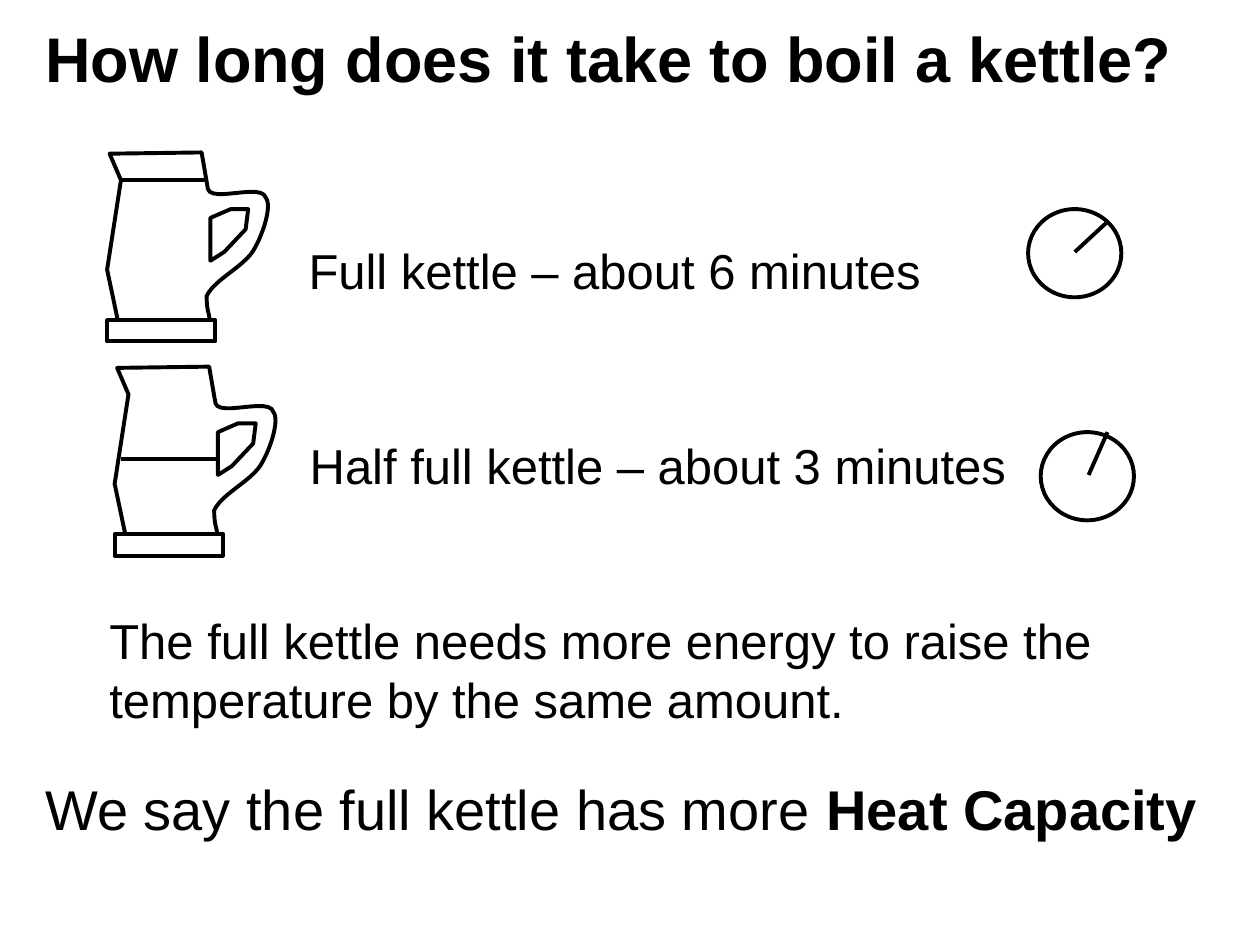
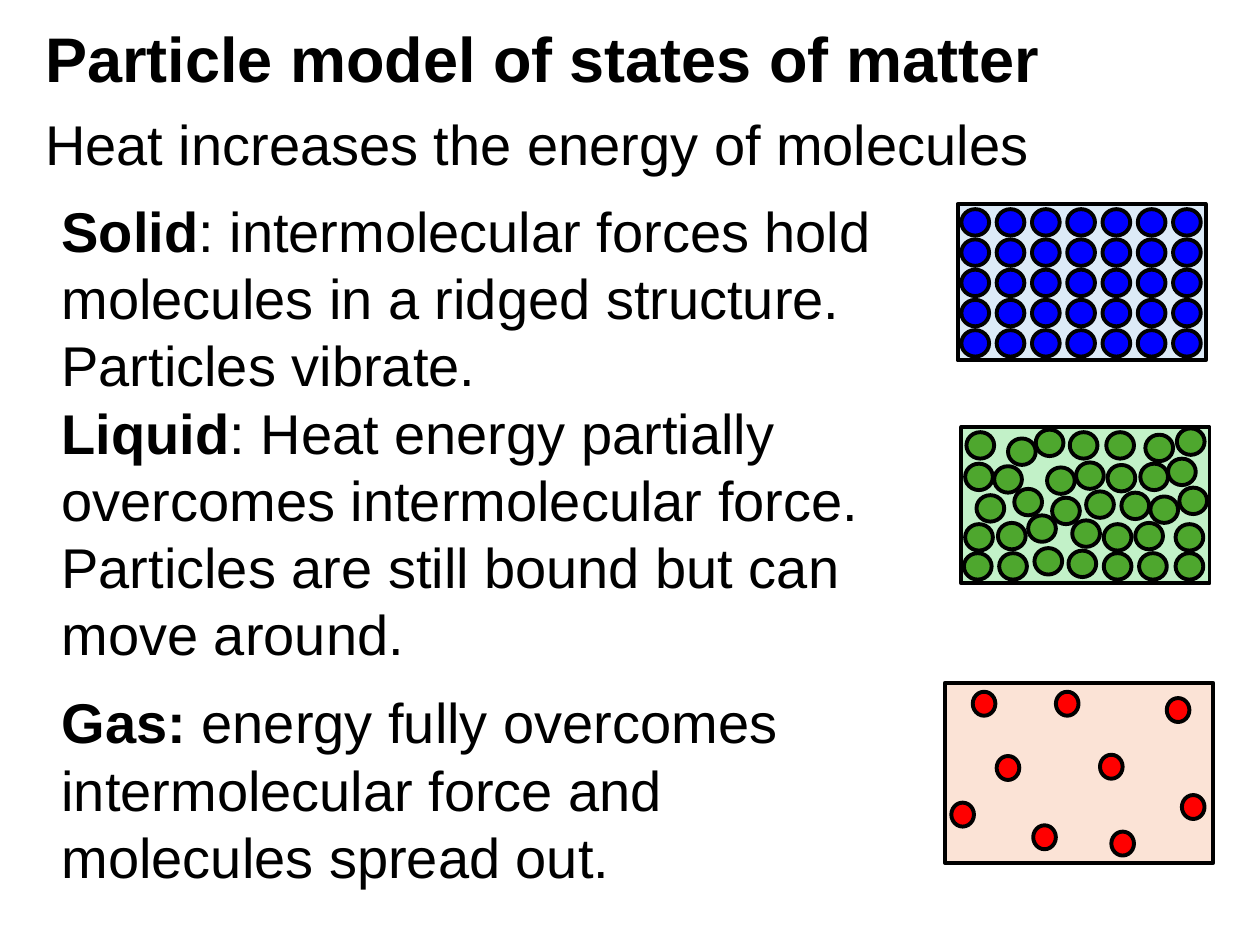
from dataclasses import dataclass
from itertools import product

from lxml.etree import SubElement
from pptx import Presentation
from pptx.dml.color import RGBColor
from pptx.enum.shapes import MSO_CONNECTOR, MSO_SHAPE
from pptx.enum.text import MSO_ANCHOR, MSO_AUTO_SIZE, PP_ALIGN
from pptx.oxml.ns import qn
from pptx.util import Inches, Pt


@dataclass(frozen=True)
class Theme:
    font: str = "Arial"
    ink: str = "000000"
    paper: str = "FFFFFF"
    solid_fill: str = "DCEAF7"
    solid_particle: str = "0000FF"
    liquid_fill: str = "C2F1C8"
    liquid_particle: str = "4EA72E"
    gas_fill: str = "FBE3D6"
    gas_particle: str = "FF0000"
    title_size: int = 36
    statement_size: int = 32
    label_size: int = 28
    line_width: float = 2.25
    paragraph_gap: int = 12


KETTLE_START = (0.96, 2.66)
KETTLE_OUTLINE = [
    (1.64, 2.64),
    (1.69, 2.48, 1.64, 2.53, 1.64, 2.35),
    (1.7, 2.22, 1.93, 2.12, 2.01, 1.99),
    (2.09, 1.86, 2.16, 1.63, 2.11, 1.57),
    (2.08, 1.45, 1.68, 1.61, 1.65, 1.5),
    (1.6, 1.21),
    (0.87, 1.22),
    (0.96, 1.43),
    (0.85, 2.14),
]
HANDLE_START = (1.67, 1.73)
HANDLE_OUTLINE = [(1.83, 1.66), (1.97, 1.66), (1.95, 1.82), (1.78, 2), (1.67, 2.07)]

SOLID_PARTICLES = [
    (7.63 + 0.28 * column, 1.66 + 0.24 * row)
    for row, column in product(range(5), range(7))
]
LIQUID_PARTICLES = [
    (7.67, 3.43), (8, 3.48), (8.22, 3.41), (8.49, 3.43), (8.78, 3.43), (9.09, 3.45), (9.34, 3.4),
    (7.66, 3.68), (7.89, 3.7), (8.31, 3.71), (8.54, 3.67), (8.79, 3.69), (9.05, 3.68), (9.27, 3.64),
    (7.75, 3.93), (8.05, 3.88), (8.35, 3.95), (8.62, 3.9), (8.9, 3.91), (9.13, 3.94), (9.36, 3.87),
    (7.66, 4.16), (7.92, 4.15), (8.16, 4.09), (8.51, 4.13), (8.76, 4.16), (9.01, 4.15), (9.33, 4.16),
    (7.65, 4.39), (7.93, 4.39), (8.21, 4.35), (8.48, 4.37), (8.76, 4.39), (9.04, 4.39), (9.33, 4.39),
]
GAS_PARTICLES = [
    (7.72, 5.49), (8.38, 5.49), (9.26, 5.54),
    (7.91, 6), (8.73, 5.99), (9.38, 6.31),
    (7.55, 6.37), (8.2, 6.55), (8.82, 6.6),
]


def curve_points(start, curve, steps=12):
    anchors = [start, curve[0:2], curve[2:4], curve[4:6]]
    points = []
    for step in range(1, steps + 1):
        t = step / steps
        weights = ((1 - t) ** 3, 3 * t * (1 - t) ** 2, 3 * t * t * (1 - t), t ** 3)
        points.append(tuple(
            sum(weight * anchor[axis] for weight, anchor in zip(weights, anchors))
            for axis in range(2)
        ))
    return points


class Deck:
    def __init__(self, theme):
        self.theme = theme
        self.presentation = Presentation()
        self.presentation.slide_width = Inches(10)
        self.presentation.slide_height = Inches(7.5)
        self.slide = None

    def add_slide(self, title):
        self.slide = self.presentation.slides.add_slide(self.presentation.slide_layouts[5])
        shape = self.slide.shapes.title
        self.place(shape, (0.26, 0.17, 9.54, 0.65))
        self.fill_text(shape.text_frame, [[(title, True)]], self.theme.title_size)
        paragraph = shape.text_frame.paragraphs[0]
        paragraph.line_spacing = 0.9

    def place(self, shape, box):
        shape.left, shape.top, shape.width, shape.height = map(Inches, box)

    def fill_text(self, frame, paragraphs, size, wrap=True, gap=0):
        frame.word_wrap = wrap
        frame.auto_size = MSO_AUTO_SIZE.SHAPE_TO_FIT_TEXT
        frame.vertical_anchor = MSO_ANCHOR.TOP
        for index, pieces in enumerate(paragraphs):
            paragraph = frame.add_paragraph() if index else frame.paragraphs[0]
            paragraph.alignment = PP_ALIGN.LEFT
            paragraph.space_after = Pt(gap)
            for text, bold in pieces:
                if text == "\n":
                    paragraph.add_line_break()
                    continue
                run = paragraph.add_run()
                run.text = text
                run.font.name = self.theme.font
                run.font.size = Pt(size)
                run.font.bold = bold
                run.font.color.rgb = RGBColor.from_string(self.theme.ink)

    def text(self, box, paragraphs, size, wrap=True):
        shape = self.slide.shapes.add_textbox(*map(Inches, box))
        self.fill_text(shape.text_frame, paragraphs, size, wrap, self.theme.paragraph_gap)

    def ink(self, line):
        line.color.rgb = RGBColor.from_string(self.theme.ink)
        line.width = Pt(self.theme.line_width)

    def paint(self, shape, fill):
        shape.shadow.inherit = False
        shape.fill.solid()
        shape.fill.fore_color.rgb = RGBColor.from_string(fill)
        self.ink(shape.line)

    def shape(self, kind, box, fill, shapes=None):
        shapes = shapes or self.slide.shapes
        self.paint(shapes.add_shape(kind, *map(Inches, box)), fill)

    def line(self, start, end):
        connector = self.slide.shapes.add_connector(
            MSO_CONNECTOR.STRAIGHT, *map(Inches, (*start, *end)))
        self.ink(connector.line)
        SubElement(connector._element.spPr, qn("a:effectLst"))

    def outline(self, shapes, start, segments, dx, dy):
        points = [start]
        for segment in segments:
            points += curve_points(points[-1], segment) if len(segment) == 6 else [segment]
        corners = [(Inches(x + dx), Inches(y + dy)) for x, y in points]
        builder = shapes.build_freeform(*corners[0])
        builder.add_line_segments(corners[1:], close=True)
        self.paint(builder.convert_to_shape(), self.theme.paper)

    def kettle(self, dx, dy, water_start, water_end):
        shapes = self.slide.shapes.add_group_shape().shapes
        self.outline(shapes, KETTLE_START, KETTLE_OUTLINE, dx, dy)
        base = (0.85 + dx, 2.54 + dy, 0.86, 0.17)
        self.shape(MSO_SHAPE.RECTANGLE, base, self.theme.paper, shapes)
        self.outline(shapes, HANDLE_START, HANDLE_OUTLINE, dx, dy)
        self.line(water_start, water_end)

    def clock(self, left, top, hand_start, hand_end):
        self.shape(MSO_SHAPE.OVAL, (left, top, 0.74, 0.7), self.theme.paper)
        self.line(hand_start, hand_end)

    def particle_box(self, box, fill, particles, size, particle_fill):
        self.shape(MSO_SHAPE.RECTANGLE, box, fill)
        for position in particles:
            self.shape(MSO_SHAPE.OVAL, (*position, *size), particle_fill)


def build_kettle_slide(deck):
    theme = deck.theme
    deck.add_slide("How long does it take to boil a kettle?")
    deck.text((2.35, 1.86, 5.12, 0.57),
              [[("Full kettle – about 6 minutes", False)]], theme.label_size, wrap=False)
    deck.text((2.36, 3.41, 5.8, 0.57),
              [[("Half full kettle – about 3 minutes", False)]], theme.label_size, wrap=False)
    deck.text((0.77, 4.8, 8.64, 1.04),
              [[("The full kettle needs more energy to raise the temperature by the same amount.", False)]],
              theme.label_size)
    deck.text((0.26, 6.1, 9.65, 0.64),
              [[("We say the full kettle has more ", False), ("Heat Capacity", True)]],
              theme.statement_size)
    deck.kettle(0, 0, (0.96, 1.43), (1.64, 1.43))
    deck.kettle(0.06, 1.7, (0.96, 3.64), (1.74, 3.64))
    deck.clock(8.16, 1.66, (8.53, 2), (8.79, 1.76))
    deck.clock(8.26, 3.43, (8.64, 3.77), (8.79, 3.43))


def build_particle_slide(deck):
    theme = deck.theme
    deck.add_slide("Particle model of states of matter")
    deck.text((0.26, 0.82, 9.56, 0.64),
              [[("Heat increases the energy of molecules", False)]], theme.statement_size)
    deck.text((0.39, 1.51, 7.04, 5.82), [
        [("Solid", True),
         (": intermolecular forces hold molecules in a ridged structure. Particles vibrate.", False),
         ("\n", False),
         ("Liquid", True),
         (": Heat energy partially overcomes intermolecular force. "
          "Particles are still bound but can move around.", False)],
        [("Gas:", True),
         (" energy fully overcomes intermolecular force and molecules spread out.", False)],
    ], theme.statement_size)
    deck.particle_box((7.6, 1.62, 1.97, 1.24), theme.solid_fill,
                      SOLID_PARTICLES, (0.22, 0.21), theme.solid_particle)
    deck.particle_box((7.63, 3.39, 1.97, 1.24), theme.liquid_fill,
                      LIQUID_PARTICLES, (0.22, 0.21), theme.liquid_particle)
    deck.particle_box((7.5, 5.42, 2.13, 1.43), theme.gas_fill,
                      GAS_PARTICLES, (0.18, 0.19), theme.gas_particle)


def main():
    deck = Deck(Theme())
    build_kettle_slide(deck)
    build_particle_slide(deck)
    deck.presentation.save("out.pptx")


if __name__ == "__main__":
    main()
